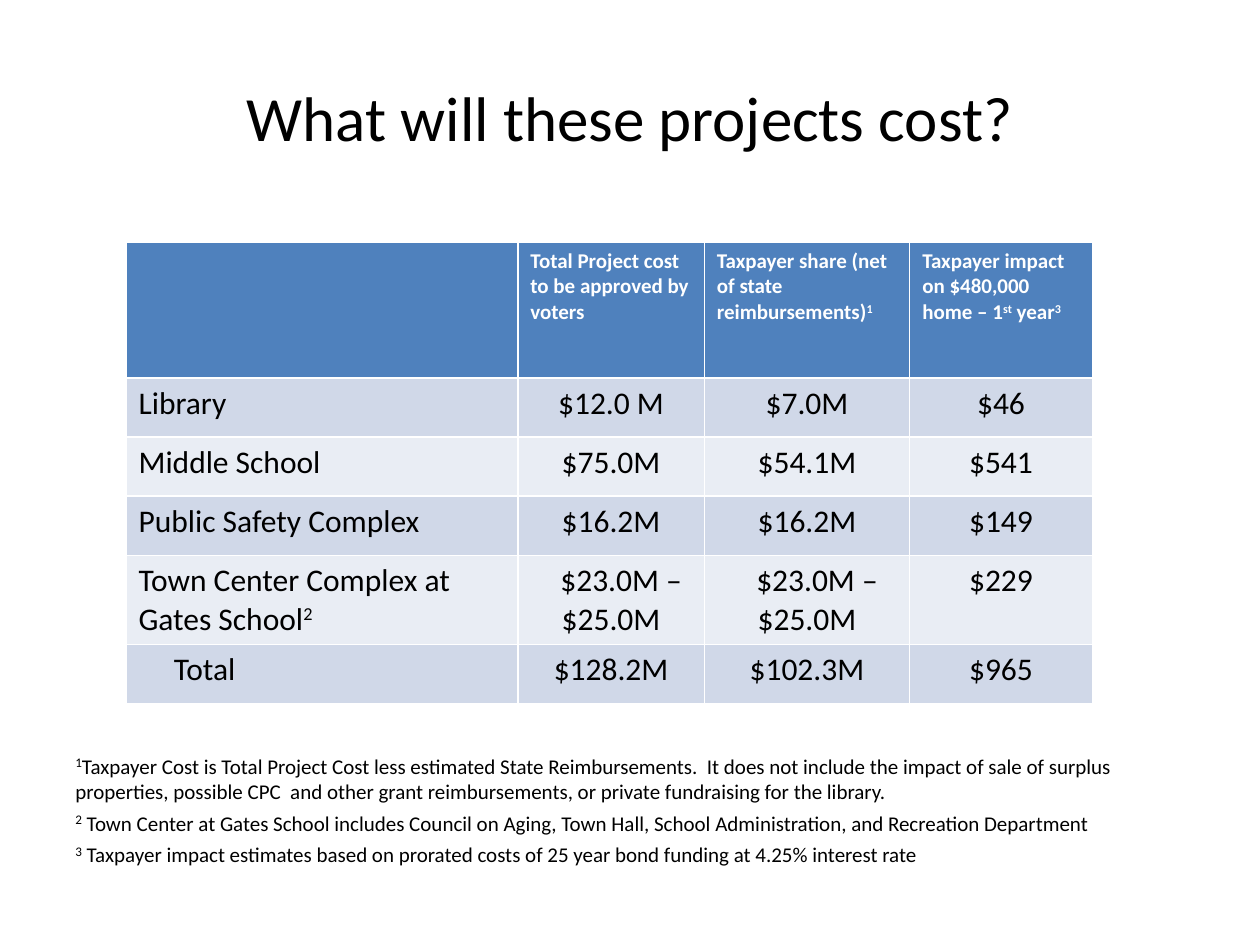
from dataclasses import dataclass

from pptx import Presentation
from pptx.dml.color import RGBColor
from pptx.enum.text import MSO_ANCHOR, PP_ALIGN
from pptx.util import Inches, Pt


@dataclass(frozen=True)
class Theme:
    font: str = "Calibri"
    ink: str = "000000"
    header_ink: str = "FFFFFF"
    header_fill: str = "4F81BD"
    band_fills: tuple = ("D0D8E8", "E9EDF4")
    title_size: float = 36
    body_size: float = 18
    small_size: float = 12
    note_mark_size: float = 12.9
    note_gap: float = 2.6


@dataclass(frozen=True)
class Box:
    left: float
    top: float
    width: float
    height: float

    def on(self, size):
        width, height = size
        return (int(self.left * width), int(self.top * height),
                int(self.width * width), int(self.height * height))


THEME = Theme()
SLIDE_SIZE = (Inches(10), Inches(7.5))
TITLE_BOX = Box(0.05, 0.04, 0.9, 0.167)
TABLE_BOX = Box(0.1, 0.256, 0.767, 0.489)
NOTES_BOX = Box(0.05, 0.789, 0.9, 0.15)

COLUMN_SHARES = (3.11, 1.48, 1.63, 1.45)
ROW_SHARES = (1.08, 0.47, 0.47, 0.47, 0.71, 0.47)
TOTAL_INDENT = Inches(0.28)
RANGE_INDENT = Inches(0.16)

COST_ROWS = (
    ("", "Total Project cost to be approved by voters",
     "Taxpayer share (net of state reimbursements)^1^",
     "Taxpayer impact on $480,000 home – 1^st^ year^3^"),
    ("Library", "$12.0 M", "$7.0M", "$46"),
    ("Middle School", "$75.0M", "$54.1M", "$541"),
    ("Public Safety Complex", "$16.2M", "$16.2M", "$149"),
    ("Town Center Complex at Gates School^2^", "$23.0M – $25.0M",
     "$23.0M – $25.0M", "$229"),
    ("Total", "$128.2M", "$102.3M", "$965"),
)

NOTES = (
    "^1^Taxpayer Cost is Total Project Cost less estimated State Reimbursements.  "
    "It does not include the impact of sale of surplus properties, possible CPC  "
    "and other grant reimbursements, or private fundraising for the library.",
    "^2^ Town Center at Gates School includes Council on Aging, Town Hall, "
    "School Administration, and Recreation Department",
    "^3^ Taxpayer impact estimates based on prorated costs of 25 year bond "
    "funding at 4.25% interest rate",
)


def apply_format(target, values):
    for name, value in values.items():
        setattr(target, name, value)


def write(paragraph, text, size, color=THEME.ink, bold=False, mark_size=None):
    for position, part in enumerate(text.split("^")):
        if not part:
            continue
        raised = position % 2 == 1
        run = paragraph.add_run()
        run.text = part
        apply_format(run.font, {
            "name": THEME.font,
            "size": Pt(mark_size if raised and mark_size else size),
            "bold": bold,
        })
        run.font.color.rgb = RGBColor.from_string(color)
        if raised:
            run.font._element.set("baseline", "30000")


def add_title(slide, box):
    frame = slide.shapes.add_textbox(*box).text_frame
    apply_format(frame, {"word_wrap": True, "vertical_anchor": MSO_ANCHOR.MIDDLE})
    paragraph = frame.paragraphs[0]
    paragraph.alignment = PP_ALIGN.CENTER
    write(paragraph, "What will these projects cost?", THEME.title_size)


def fill_cell(cell, text, row, column):
    header = row == 0
    fill = THEME.header_fill if header else THEME.band_fills[(row - 1) % 2]
    cell.fill.solid()
    cell.fill.fore_color.rgb = RGBColor.from_string(fill)
    paragraph = cell.text_frame.paragraphs[0]
    if header:
        write(paragraph, text, THEME.small_size, THEME.header_ink, True)
        return
    paragraph.alignment = PP_ALIGN.CENTER if column else PP_ALIGN.LEFT
    properties = paragraph._p.get_or_add_pPr()
    if text == "Total":
        properties.set("marL", str(TOTAL_INDENT))
    elif "–" in text:
        properties.set("indent", str(RANGE_INDENT))
    write(paragraph, text, THEME.body_size)


def add_cost_table(slide, box):
    table = slide.shapes.add_table(len(COST_ROWS), len(COLUMN_SHARES), *box).table
    for column, share in zip(table.columns, COLUMN_SHARES):
        column.width = int(box[2] * share / sum(COLUMN_SHARES))
    for row, share in zip(table.rows, ROW_SHARES):
        row.height = int(box[3] * share / sum(ROW_SHARES))
    for row, texts in enumerate(COST_ROWS):
        for column, text in enumerate(texts):
            fill_cell(table.cell(row, column), text, row, column)


def add_notes(slide, box):
    frame = slide.shapes.add_textbox(*box).text_frame
    frame.word_wrap = True
    for position, note in enumerate(NOTES):
        paragraph = frame.add_paragraph() if position else frame.paragraphs[0]
        paragraph.space_before = Pt(THEME.note_gap)
        write(paragraph, note, THEME.small_size, mark_size=THEME.note_mark_size)


def main():
    presentation = Presentation()
    apply_format(presentation, dict(zip(("slide_width", "slide_height"), SLIDE_SIZE)))
    slide = presentation.slides.add_slide(presentation.slide_layouts[6])
    add_title(slide, TITLE_BOX.on(SLIDE_SIZE))
    add_cost_table(slide, TABLE_BOX.on(SLIDE_SIZE))
    add_notes(slide, NOTES_BOX.on(SLIDE_SIZE))
    presentation.save("out.pptx")


if __name__ == "__main__":
    main()
